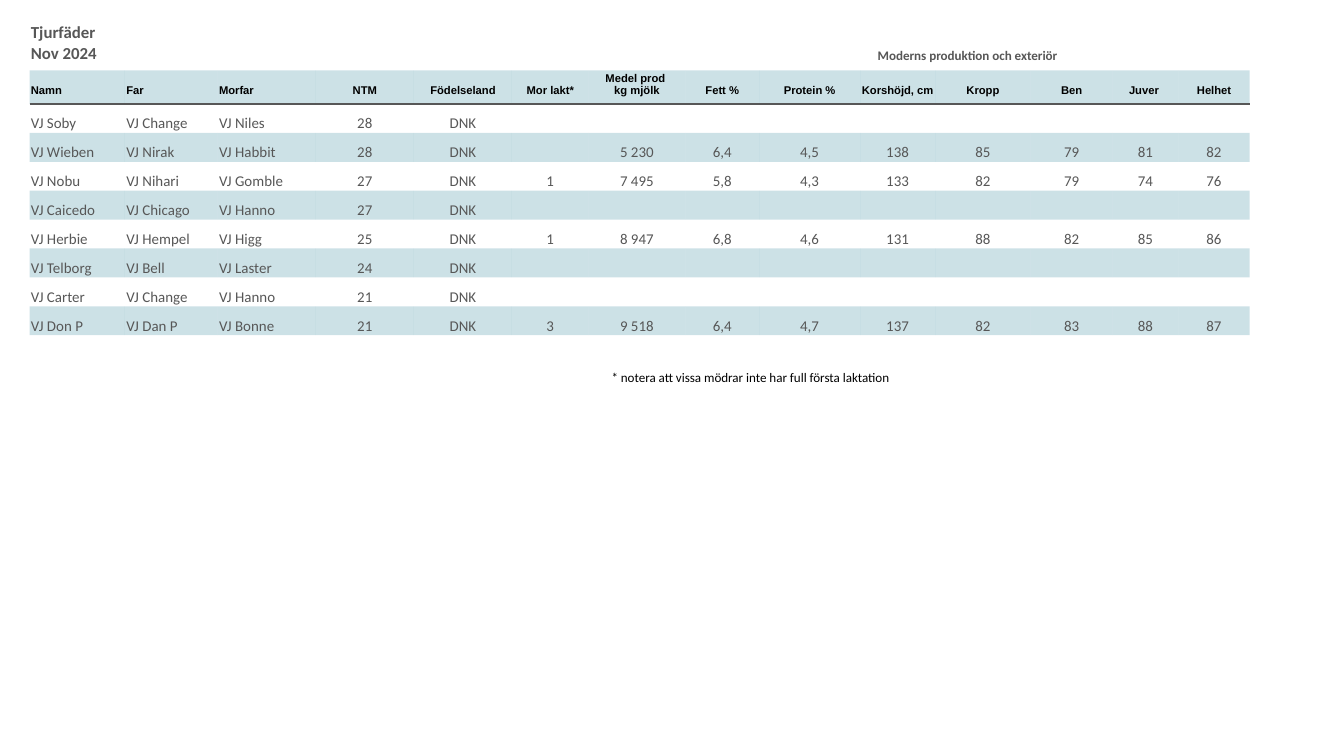
from lxml.etree import SubElement
from pptx import Presentation
from pptx.dml.color import RGBColor
from pptx.enum.text import MSO_ANCHOR, PP_ALIGN
from pptx.oxml import parse_xml
from pptx.oxml.ns import nsdecls, qn
from pptx.util import Inches, Pt

GREY = RGBColor(0x57, 0x57, 0x57)
BLACK = RGBColor(0, 0, 0)
TEAL = RGBColor(0x00, 0x6B, 0x85)
PLAIN = "{2D5ABB26-0587-4C30-8999-92F81FD0307C}"

WIDTHS = [0.71, 0.69, 0.73, 0.73, 0.73, 0.57, 0.72,
          0.55, 0.75, 0.56, 0.71, 0.61, 0.49, 0.53]
HEIGHTS = [0.36, 0.25] + [1.72 / 8] * 8
HEADS = ["Namn", "Far", "Morfar", "NTM", "Födelseland", "Mor lakt*",
         "Medel prod \vkg mjölk", "Fett %", "Protein %", "Korshöjd, cm",
         "Kropp", "Ben", "Juver ", "Helhet"]
NONE = [""] * 9
BULLS = [
    ["VJ Soby", "VJ Change", "VJ Niles", "28", "DNK", *NONE],
    ["VJ Wieben", "VJ Nirak", "VJ Habbit", "28", "DNK", "", "5 230",
     "6,4", "4,5", "138", "85", "79", "81", "82"],
    ["VJ Nobu", "VJ Nihari", "VJ Gomble", "27", "DNK", "1", "7 495",
     "5,8", "4,3", "133", "82", "79", "74", "76"],
    ["VJ Caicedo", "VJ Chicago", "VJ Hanno", "27", "DNK", *NONE],
    ["VJ Herbie", "VJ Hempel", "VJ Higg", "25", "DNK", "1", "8 947",
     "6,8", "4,6", "131", "88", "82", "85", "86"],
    ["VJ Telborg", "VJ Bell", "VJ Laster", "24", "DNK", *NONE],
    ["VJ Carter", "VJ Change", "VJ Hanno", "21", "DNK", *NONE],
    ["VJ Don P", "VJ Dan P", "VJ Bonne", "21", "DNK", "3", "9 518",
     "6,4", "4,7", "137", "82", "83", "88", "87"],
]


def add_grid(slide, left, top, widths, heights):
    frame = slide.shapes.add_table(
        len(heights), len(widths), Inches(left), Inches(top),
        Inches(sum(widths)), Inches(sum(heights)))
    table = frame.table
    table.first_row = table.horz_banding = False
    next(frame.element.iter(qn("a:tableStyleId"))).text = PLAIN
    for col, width in zip(table.columns, widths):
        col.width = Inches(width)
    for row, height in zip(table.rows, heights):
        row.height = Inches(height)
    return table


def put_text(cell, text, size, color=GREY, face="Calibri", bold=False,
             align=PP_ALIGN.LEFT, base=0.05):
    cell.text = text
    cell.vertical_anchor = MSO_ANCHOR.BOTTOM
    cell.margin_left = cell.margin_right = cell.margin_top = Inches(0.01)
    cell.margin_bottom = Inches(base)
    cell.fill.background()
    para = cell.text_frame.paragraphs[0]
    para.alignment = align
    font = para.font
    font.name, font.size, font.bold = face, Pt(size), bold
    font.color.rgb = color
    if not text:
        SubElement(para._p, qn("a:endParaRPr"), sz=str(size * 100))


def tint(cell):
    cell.fill.solid()
    cell.fill.fore_color.rgb = TEAL
    color = next(cell._tc.tcPr.iter(qn("a:srgbClr")))
    SubElement(color, qn("a:alpha"), val="20000")


def add_rule(cell):
    cell._tc.tcPr.insert(0, parse_xml(
        f'<a:lnB {nsdecls("a")} w="12700"><a:solidFill>'
        f'<a:srgbClr val="{GREY}"/></a:solidFill></a:lnB>'))


def fill_top(table):
    for col in range(len(WIDTHS)):
        put_text(table.cell(0, col), "", 7)
    for start, end in [(0, 1), (5, 6), (7, 13)]:
        table.cell(0, start).merge(table.cell(0, end))
    put_text(table.cell(0, 0), "Tjurfäder\vNov 2024", 9, bold=True)
    put_text(table.cell(0, 7), "Moderns produktion och exteriör", 7,
             bold=True, align=PP_ALIGN.CENTER)


def fill_rows(table):
    for row, texts in enumerate([HEADS] + BULLS, 1):
        for col, text in enumerate(texts):
            cell = table.cell(row, col)
            align = PP_ALIGN.LEFT if col < 3 else PP_ALIGN.CENTER
            if row == 1:
                put_text(cell, text, 6, BLACK, "Arial", True, align)
            else:
                put_text(cell, text, 8, align=align, base=0)
            if row % 2:
                tint(cell)
            if row == 1:
                add_rule(cell)


def main():
    deck = Presentation()
    deck.slide_width, deck.slide_height = Inches(10), Inches(5.625)
    slide = deck.slides.add_slide(deck.slide_layouts[6])
    table = add_grid(slide, 0.22, 0.16, WIDTHS, HEIGHTS)
    fill_top(table)
    fill_rows(table)
    note = add_grid(slide, 4.54, 2.7, [3.58], [0.22])
    put_text(note.cell(0, 0),
             "* notera att vissa mödrar inte har full första laktation",
             7, BLACK)
    deck.save("out.pptx")


if __name__ == "__main__":
    main()
